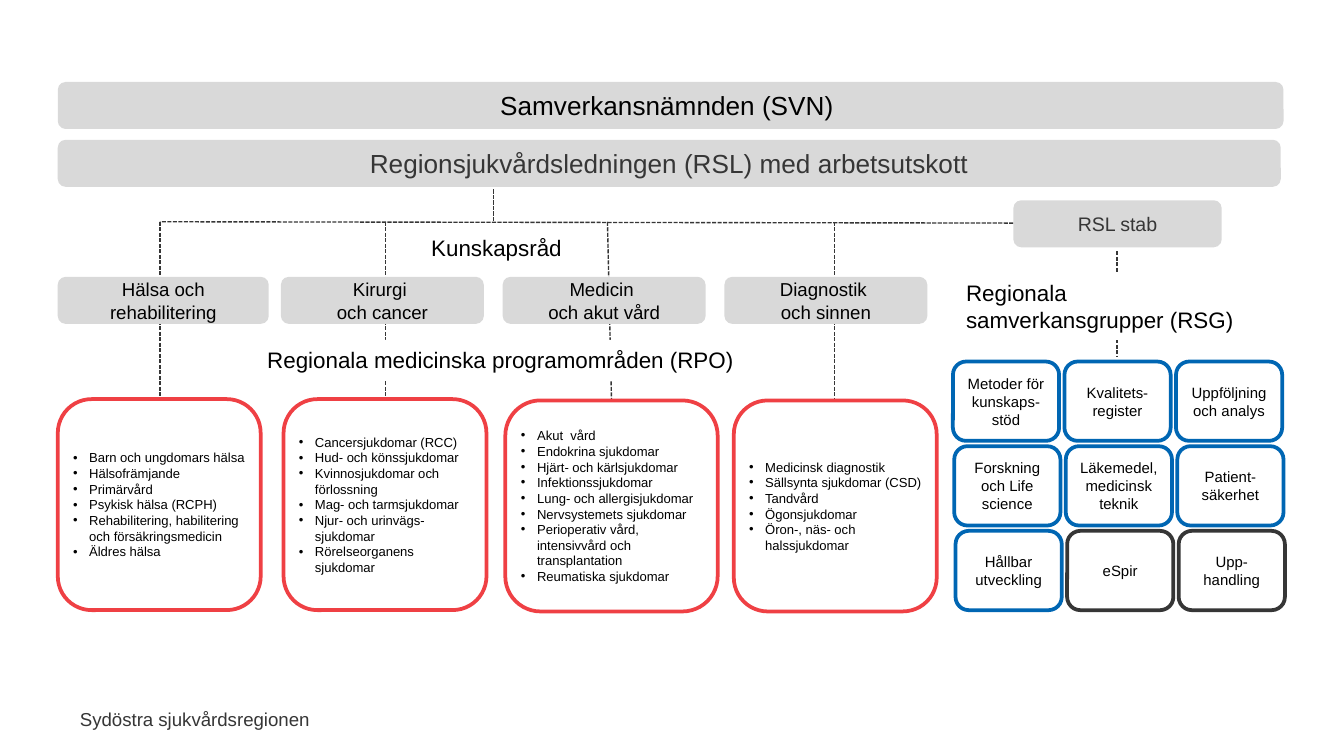
"""Build the organisation slide of a Swedish healthcare region."""
import copy
from dataclasses import dataclass, replace
from typing import NamedTuple, Optional

import pptx
import pptx.dml.color
import pptx.enum.dml
import pptx.enum.shapes
import pptx.enum.text
import pptx.oxml.ns
import pptx.util
from lxml import etree

Inches = pptx.util.Inches
RGBColor = pptx.dml.color.RGBColor
Align = pptx.enum.text.PP_ALIGN
Anchor = pptx.enum.text.MSO_ANCHOR
Preset = pptx.enum.shapes.MSO_SHAPE
qn = pptx.oxml.ns.qn

BLACK = RGBColor(0x00, 0x00, 0x00)
WHITE = RGBColor(0xFF, 0xFF, 0xFF)
CHARCOAL = RGBColor(0x36, 0x36, 0x36)
GREY = RGBColor(0xD9, 0xD9, 0xD9)
BLUE = RGBColor(0x00, 0x66, 0xB3)
RED = RGBColor(0xEF, 0x40, 0x44)


@dataclass(frozen=True)
class Style:
    size: float
    color: RGBColor = BLACK
    fill: Optional[RGBColor] = None
    outline: Optional[RGBColor] = None
    preset: Optional[Preset] = Preset.ROUNDED_RECTANGLE
    align: Align = Align.CENTER
    anchor: Anchor = Anchor.MIDDLE
    inset: Optional[float] = None
    bullets: bool = False
    wrap: bool = True


class Box(NamedTuple):
    left: float
    top: float
    width: float
    height: float
    paragraphs: tuple[str, ...]
    style: Style


class Line(NamedTuple):
    start_x: float
    start_y: float
    end_x: float
    end_y: float


class Council(NamedTuple):
    heading_left: float
    heading_width: float
    heading: str
    list_left: float
    list_top: float
    list_width: float
    programmes: tuple[str, ...]


BOARD = Style(14, fill=GREY)
MANAGEMENT = replace(BOARD, color=CHARCOAL)
STAFF = replace(MANAGEMENT, size=10.5)
COUNCIL = replace(BOARD, size=10)
GROUP = Style(8, outline=BLUE, inset=0.04)
FILLED_GROUP = replace(GROUP, fill=WHITE)
SUPPORT_GROUP = replace(GROUP, outline=CHARCOAL)
PROGRAMMES = Style(7, fill=WHITE, outline=RED, align=Align.LEFT, inset=0.04, bullets=True)
LABEL = Style(12, preset=None, anchor=Anchor.TOP)
COVER_LABEL = replace(LABEL, fill=WHITE, preset=Preset.RECTANGLE)
GROUP_LABEL = replace(COVER_LABEL, align=Align.LEFT)
FOOTER = replace(LABEL, size=10, color=CHARCOAL, align=Align.RIGHT, wrap=False)

LINES = (
    Line(8.31, 1.87, 8.31, 2.66),
    Line(6.21, 1.65, 6.21, 2.98),
    Line(4.52, 1.65, 4.55, 2.98),
    Line(1.19, 1.65, 1.19, 2.97),
    Line(2.87, 1.65, 2.87, 2.97),
    Line(3.67, 1.41, 3.67, 1.65),
    Line(7.54, 1.66, 1.19, 1.65),
)

COUNCILS = (
    Council(0.43, 1.57, "Hälsa och rehabilitering", 0.43, 2.97, 1.51, (
        "Barn och ungdomars hälsa", "Hälsofrämjande", "Primärvård",
        "Psykisk hälsa (RCPH)",
        "Rehabilitering, habilitering och försäkringsmedicin", "Äldres hälsa")),
    Council(2.09, 1.51, "Kirurgi \noch cancer", 2.11, 2.97, 1.51, (
        "Cancersjukdomar (RCC)", "Hud- och könssjukdomar",
        "Kvinnosjukdomar och förlossning", "Mag- och tarmsjukdomar",
        "Njur- och urinvägs-sjukdomar", "Rörelseorganens sjukdomar")),
    Council(3.74, 1.51, "Medicin \noch akut vård", 3.76, 2.98, 1.58, (
        "Akut  vård", "Endokrina sjukdomar", "Hjärt- och kärlsjukdomar",
        "Infektionssjukdomar", "Lung- och allergisjukdomar",
        "Nervsystemets sjukdomar",
        "Perioperativ vård, intensivvård och transplantation",
        "Reumatiska sjukdomar")),
    Council(5.39, 1.51, "Diagnostik \noch sinnen", 5.46, 2.98, 1.51, (
        "Medicinsk diagnostik", "Sällsynta sjukdomar (CSD)", "Tandvård",
        "Ögonsjukdomar", "Öron-, näs- och halssjukdomar")),
)

GROUP_ROWS = (
    (("Metoder för kunskaps-stöd",), ("Kvalitets-register",), ("Uppföljning och analys",)),
    (("Forskning och Life science",), ("Läkemedel,", "medicinsk teknik"), ("Patient-säkerhet",)),
    (("Hållbar utveckling",), ("eSpir",), ("Upp-handling",)),
)
SPECIAL_GROUPS = {
    "Uppföljning och analys": FILLED_GROUP,
    "eSpir": SUPPORT_GROUP,
    "Upp-handling": SUPPORT_GROUP,
}

BOXES = (
    Box(0.48, 5.22, 1.92, 0.27, ("Sydöstra sjukvårdsregionen",), FOOTER),
    Box(0.43, 0.61, 9.12, 0.35, ("Samverkansnämnden (SVN) ",), BOARD),
    Box(0.43, 1.04, 9.1, 0.35, ("Regionsjukvårdsledningen (RSL) med arbetsutskott",), MANAGEMENT),
    Box(0.43, 1.69, 6.53, 0.3, ("Kunskapsråd",), LABEL),
    Box(1.3, 2.53, 4.85, 0.3, ("Regionala medicinska programområden (RPO)",), COVER_LABEL),
    Box(7.09, 2.03, 2.44, 0.5, ("Regionala samverkansgrupper (RSG)",), GROUP_LABEL),
    Box(7.54, 1.49, 1.55, 0.35, ("RSL stab",), STAFF),
)


def set_attributes(target: object, values: dict) -> None:
    for name, value in values.items():
        setattr(target, name, value)


def add_bullet(paragraph) -> None:
    properties = paragraph._p.get_or_add_pPr()
    properties.set("marL", str(Inches(0.12)))
    properties.set("indent", str(-Inches(0.12)))
    etree.SubElement(properties, qn("a:buFont")).set("typeface", "Arial")
    etree.SubElement(properties, qn("a:buChar")).set("char", "•")


def write_text(frame, paragraphs: tuple[str, ...], style: Style) -> None:
    set_attributes(frame, {"word_wrap": style.wrap, "vertical_anchor": style.anchor})
    if style.inset is not None:
        margins = ("margin_left", "margin_top", "margin_right", "margin_bottom")
        set_attributes(frame, dict.fromkeys(margins, Inches(style.inset)))
    for index, text in enumerate(paragraphs):
        paragraph = frame.add_paragraph() if index else frame.paragraphs[0]
        paragraph.text = text
        paragraph.alignment = style.align
        if style.bullets:
            add_bullet(paragraph)
        for run in paragraph.runs:
            set_attributes(run.font, {"name": "Arial", "size": pptx.util.Pt(style.size)})
            run.font.color.rgb = style.color
        for line_break in paragraph._p.findall(qn("a:br")):
            line_break.append(copy.deepcopy(paragraph.runs[0].font._rPr))


def paint(fill, color: Optional[RGBColor]) -> None:
    if color is None:
        fill.background()
    else:
        fill.solid()
        fill.fore_color.rgb = color


def draw_box(slide, box: Box) -> None:
    style = box.style
    bounds = [Inches(length) for length in box[:4]]
    if style.preset is None:
        shape = slide.shapes.add_textbox(*bounds)
    else:
        shape = slide.shapes.add_shape(style.preset, *bounds)
        shape.shadow.inherit = False
        paint(shape.fill, style.fill)
        paint(shape.line.fill, style.outline)
        if style.outline is not None:
            shape.line.width = pptx.util.Pt(2)
    write_text(shape.text_frame, box.paragraphs, style)


def draw_line(slide, line: Line) -> None:
    connector = slide.shapes.add_connector(
        pptx.enum.shapes.MSO_CONNECTOR.STRAIGHT, *map(Inches, line))
    connector.line.color.rgb = CHARCOAL
    set_attributes(connector.line, {
        "width": pptx.util.Pt(0.75),
        "dash_style": pptx.enum.dml.MSO_LINE.SQUARE_DOT,
    })
    etree.SubElement(connector._element.spPr, qn("a:effectLst"))


def draw_council(slide, council: Council) -> None:
    draw_box(slide, Box(council.heading_left, 2.06, council.heading_width, 0.35,
                        (council.heading,), COUNCIL))
    draw_box(slide, Box(council.list_left, council.list_top, council.list_width, 1.57,
                        council.programmes, PROGRAMMES))


def draw_groups(slide) -> None:
    for row, names in enumerate(GROUP_ROWS):
        for column, paragraphs in enumerate(names):
            style = SPECIAL_GROUPS.get(paragraphs[0], GROUP)
            draw_box(slide, Box(7.09 + 0.83 * column + 0.01 * row, 2.69 + 0.63 * row,
                                0.79, 0.59, paragraphs, style))


def main() -> None:
    presentation = pptx.Presentation()
    width = Inches(10)
    set_attributes(presentation, {"slide_width": width, "slide_height": width * 9 // 16})
    slide = presentation.slides.add_slide(presentation.slide_layouts[6])
    for line in LINES:
        draw_line(slide, line)
    draw_groups(slide)
    for council in COUNCILS:
        draw_council(slide, council)
    for box in BOXES:
        draw_box(slide, box)
    presentation.save("out.pptx")


if __name__ == "__main__":
    main()
